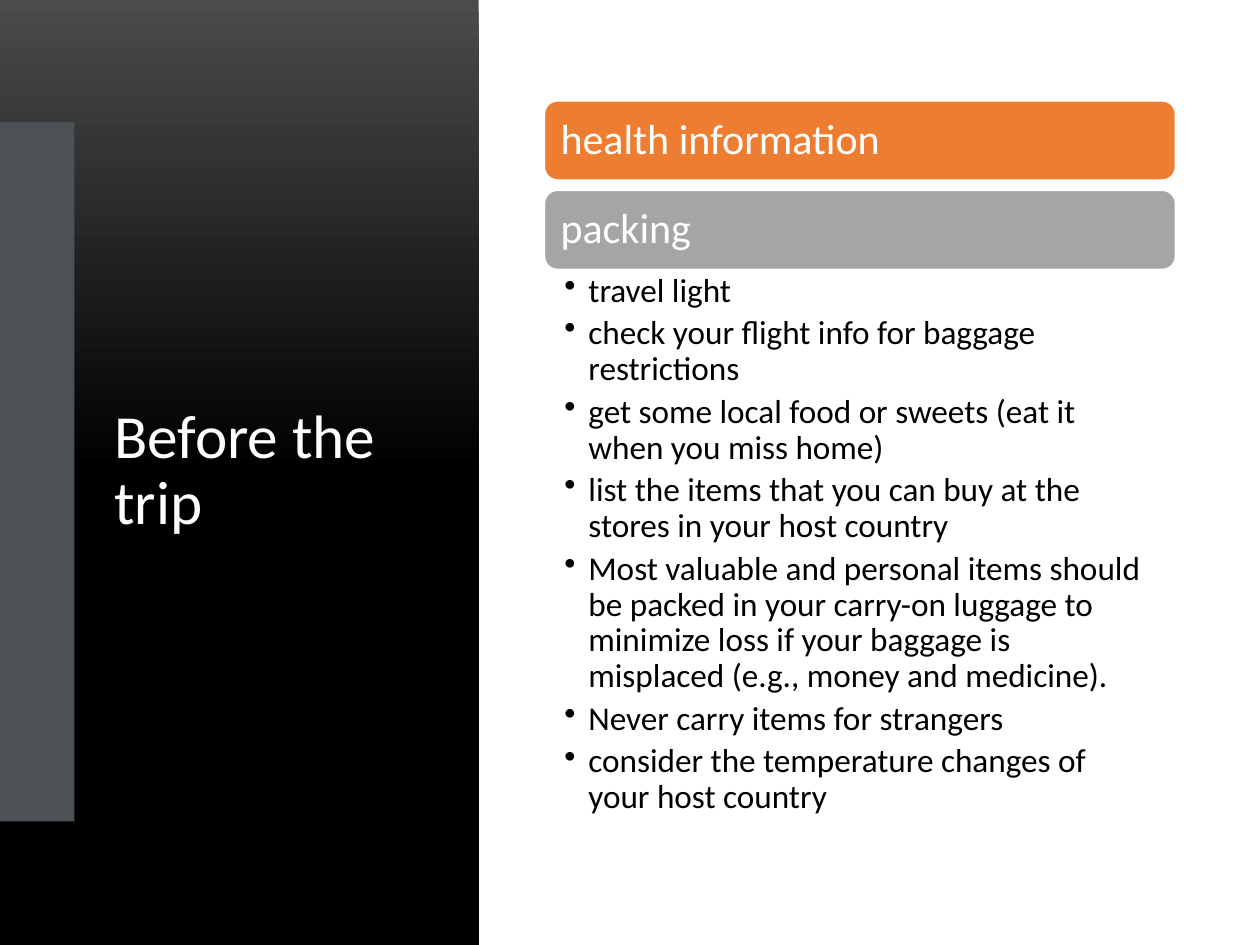
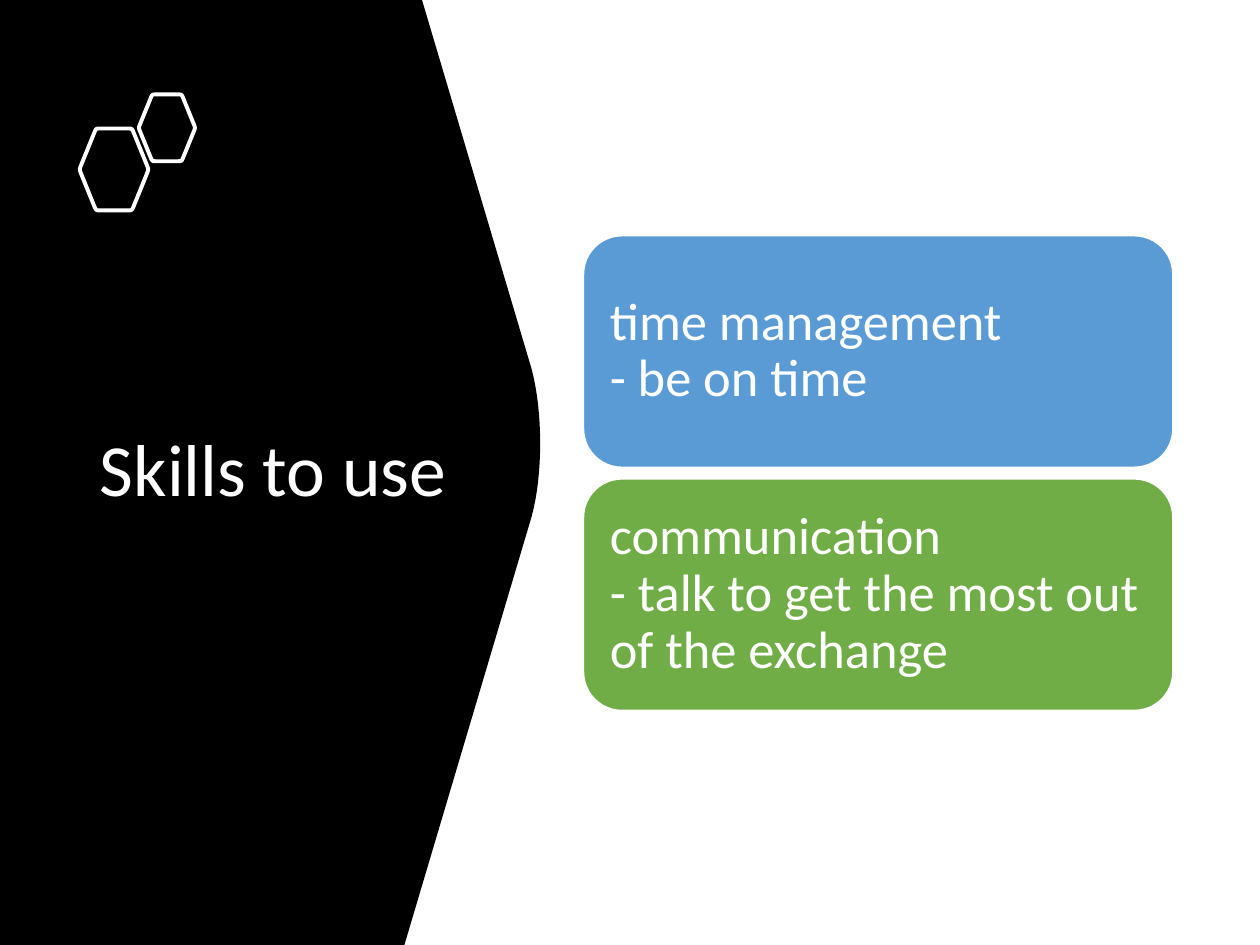
from lxml import etree
from pptx import Presentation
from pptx.dml.color import RGBColor
from pptx.enum.shapes import MSO_SHAPE
from pptx.enum.text import MSO_ANCHOR, PP_ALIGN
from pptx.oxml.ns import qn
from pptx.util import Inches, Pt

RECT, ROUND_RECT = MSO_SHAPE.RECTANGLE, MSO_SHAPE.ROUNDED_RECTANGLE
TOP, MIDDLE = MSO_ANCHOR.TOP, MSO_ANCHOR.MIDDLE
LEFT, RIGHT = PP_ALIGN.LEFT, PP_ALIGN.RIGHT

FONT = "Calibri"
WHITE, BLACK, CHARCOAL, SLATE = "FFFFFF", "000000", "4B4B4B", "4C5254"
ORANGE, GREY, BLUE, GREEN = "ED7D31", "A5A5A5", "5B9BD5", "70AD47"

TRIP_TITLE = "Before the trip"
TRIP_TOPICS = [("health information", ORANGE), ("packing", GREY)]
PACKING_TIPS = [
    "travel light",
    "check your flight info for baggage restrictions",
    "get some local food or sweets (eat it when you miss home)",
    "list the items that you can buy at the stores in your host country",
    "Most valuable and personal items should be packed in your carry-on luggage "
    "to minimize loss if your baggage is misplaced (e.g., money and medicine).",
    "Never carry items for strangers",
    "consider the temperature changes of your host country",
]
SKILLS_TITLE = "Skills to use"
SKILLS = [
    ("time management\n- be on time", BLUE),
    ("communication\n- talk to get the most out of the exchange", GREEN),
]
HEXAGONS = [(0.63, 1.02, 0.55, 0.65), (1.1, 0.75, 0.45, 0.53)]
HEXAGON_CORNERS = [(0, 0.5), (0.24, 0), (0.76, 0), (1, 0.5), (0.76, 1), (0.24, 1)]


def rgb(color):
    return RGBColor.from_string(color)


def style(sp, fill=None, line=None, width=1):
    sp.shadow.inherit = False
    if fill:
        sp.fill.solid()
        sp.fill.fore_color.rgb = rgb(fill)
    else:
        sp.fill.background()
    if line:
        sp.line.color.rgb = rgb(line)
        sp.line.width = Pt(width)
    else:
        sp.line.fill.background()


def add_box(s, shape, box, fill, line=None):
    sp = s.shapes.add_shape(shape, *map(Inches, box))
    style(sp, fill, line)
    return sp


def write(sp, paragraphs, size, color, insets, anchor=MIDDLE, align=LEFT):
    """Fill a shape with paragraphs; a newline inside one is a line break."""
    tf = sp.text_frame
    tf.word_wrap = True
    tf.vertical_anchor = anchor
    tf.margin_left, tf.margin_top, tf.margin_right, tf.margin_bottom = map(Inches, insets)
    for i, text in enumerate(paragraphs):
        p = tf.paragraphs[0] if i == 0 else tf.add_paragraph()
        p.alignment = align
        p.line_spacing = 0.9
        for j, part in enumerate(text.split("\n")):
            if j:
                p.add_line_break()
            r = p.add_run()
            r.text = part
            r.font.name = FONT
            r.font.size = Pt(size)
            r.font.color.rgb = rgb(color)
    return tf


def add_title(s, text, box, size, align=LEFT):
    sp = s.shapes.add_textbox(*map(Inches, box))
    write(sp, [text], size, WHITE, (0.1, 0.05, 0.1, 0.05), align=align)


def add_cards(s, cards, left, top, width, height, pitch, size, inset):
    for i, (text, color) in enumerate(cards):
        sp = add_box(s, ROUND_RECT, (left, top + i * pitch, width, height), color, WHITE)
        write(sp, [text], size, WHITE, [inset] * 4)


def add_bullets(tf, indent, gap):
    for p in tf.paragraphs:
        p.space_after = Pt(gap)
        pPr = p._p.get_or_add_pPr()
        pPr.set("marL", str(Inches(indent)))
        pPr.set("indent", str(-Inches(indent)))
        etree.SubElement(pPr, qn("a:buChar")).set("char", "•")


def curve(start, c1, c2, end, steps=16):
    """Points along a cubic Bezier curve."""
    points = []
    for i in range(steps + 1):
        t = i / steps
        u = 1 - t
        weights = (u**3, 3 * u * u * t, 3 * u * t * t, t**3)
        points.append(tuple(sum(w * q[axis] for w, q in zip(weights, (start, c1, c2, end)))
                            for axis in (0, 1)))
    return points


def add_outline(s, points, **look):
    first, *rest = [(Inches(x), Inches(y)) for x, y in points]
    builder = s.shapes.build_freeform(*first)
    builder.add_line_segments(rest, close=True)
    style(builder.convert_to_shape(), **look)


def rounded(corners, cut):
    """Replace each corner by a short curve that begins a share of the side away."""
    points = []
    for i, (x, y) in enumerate(corners):
        before, after = [(x + cut * (nx - x), y + cut * (ny - y))
                         for nx, ny in (corners[i - 1], corners[(i + 1) % len(corners)])]
        points += curve(before, (x, y), (x, y), after, 6)
    return points


def trip_slide(s):
    panel = add_box(s, RECT, (0, 0, 3.8, 7.5), BLACK)
    panel.fill.gradient()
    panel.fill.gradient_angle = 270
    for stop, color, position in zip(panel.fill.gradient_stops, (CHARCOAL, BLACK), (0, 0.5)):
        stop.color.rgb = rgb(color)
        stop.position = position
    add_title(s, TRIP_TITLE, (0.81, 0.97, 2.57, 5.55), 35)
    add_box(s, RECT, (0, 0.97, 0.59, 5.55), SLATE)
    add_cards(s, TRIP_TOPICS, 4.32, 0.8, 5.01, 0.63, 0.71, 24, 0.1)
    tips = s.shapes.add_textbox(*map(Inches, (4.32, 2.14, 5.01, 4.56)))
    tf = write(tips, PACKING_TIPS, 19, BLACK, (0.16, 0.03, 0.19, 0.03), TOP)
    add_bullets(tf, 0.19, 3.8)


def skills_slide(s):
    nose = curve((4.22, 2.93), (4.31, 3.27), (4.31, 3.77), (4.22, 4.1))
    add_outline(s, [(0, 0), (3.35, 0), *nose, (3.21, 7.5), (0, 7.5)], fill=BLACK)
    add_title(s, SKILLS_TITLE, (0.63, 1.83, 3.01, 3.84), 42, RIGHT)
    for left, top, width, height in HEXAGONS:
        corners = [(left + x * width, top + y * height) for x, y in HEXAGON_CORNERS]
        add_outline(s, rounded(corners, 0.12), line=WHITE, width=2.25)
    add_cards(s, SKILLS, 4.63, 1.87, 4.68, 1.84, 1.93, 30, 0.12)


def main():
    prs = Presentation()
    prs.slide_width, prs.slide_height = Inches(10), Inches(7.5)
    for build in (trip_slide, skills_slide):
        build(prs.slides.add_slide(prs.slide_layouts[6]))
    prs.save("out.pptx")


if __name__ == "__main__":
    main()
